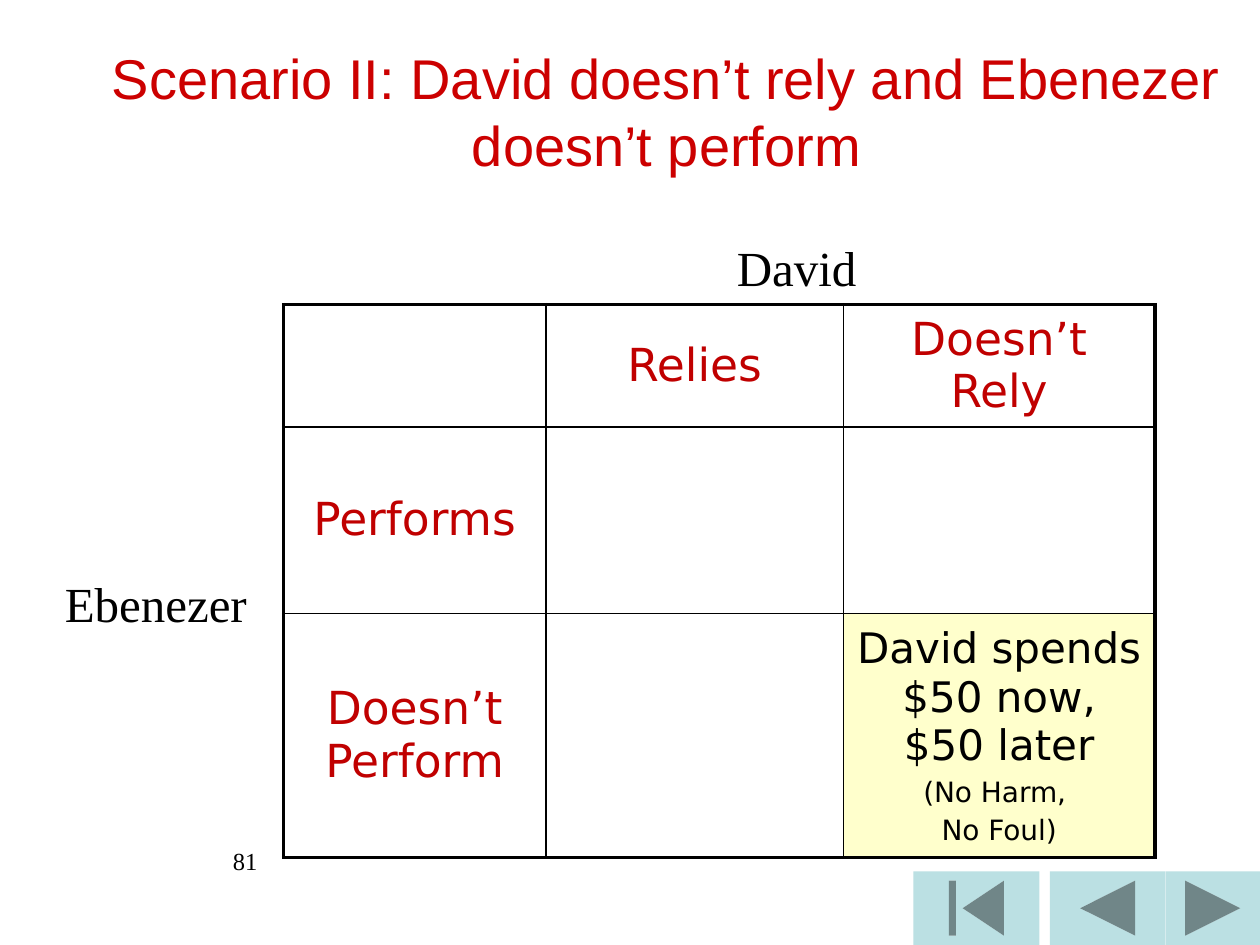
from lxml import etree
from pptx import Presentation
from pptx.dml.color import RGBColor
from pptx.enum.shapes import MSO_SHAPE
from pptx.enum.text import MSO_ANCHOR, MSO_AUTO_SIZE, PP_ALIGN
from pptx.oxml.ns import qn
from pptx.util import Pt

CENTER = PP_ALIGN.CENTER
MIDDLE = MSO_ANCHOR.MIDDLE
NO_AUTO_SIZE = MSO_AUTO_SIZE.NONE
BEGINNING = MSO_SHAPE.ACTION_BUTTON_BEGINNING
PREVIOUS = MSO_SHAPE.ACTION_BUTTON_BACK_OR_PREVIOUS
NEXT = MSO_SHAPE.ACTION_BUTTON_FORWARD_OR_NEXT

BLACK = RGBColor(0x00, 0x00, 0x00)
TITLE_RED = RGBColor(0xCC, 0x00, 0x00)
HEADING_RED = RGBColor(0xC0, 0x00, 0x00)
OUTCOME_YELLOW = RGBColor(0xFF, 0xFF, 0xCC)
BUTTON_BLUE = RGBColor(0xBB, 0xE0, 0xE3)

TITLE_FONT = "Arial"
TABLE_FONT = "DejaVu Sans"
LABEL_FONT = "Times New Roman"

COLUMN_WIDTHS = (150, 170, 178)
ROW_HEIGHTS = (70, 106.5, 139.5)
HEADINGS = {
    (0, 1): "Relies",
    (0, 2): "Doesn’t Rely",
    (1, 0): "Performs",
    (2, 0): "Doesn’t Perform",
}
OUTCOME = (("David spends $50 now, $50 later", 24), ("(No Harm, ", 16), ("No Foul)", 16))
THICK, THIN = 2.25, 1


def add_run(paragraph, text, font_name, size, color):
    run = paragraph.add_run()
    run.text = text
    run.font.name = font_name
    run.font.size = Pt(size)
    run.font.color.rgb = color


def place(shape, left, top, width, height):
    shape.left, shape.top = Pt(left), Pt(top)
    shape.width, shape.height = Pt(width), Pt(height)


def add_title(slide, left, top, width, height):
    title = slide.shapes.title
    place(title, left, top, width, height)
    frame = title.text_frame
    frame.auto_size = NO_AUTO_SIZE
    frame.word_wrap = True
    frame.vertical_anchor = MIDDLE
    paragraph = frame.paragraphs[0]
    paragraph.alignment = CENTER
    add_run(paragraph, "Scenario II: David doesn’t rely and Ebenezer doesn’t perform",
            TITLE_FONT, 32, TITLE_RED)


def add_label(slide, text, size, left, top, width, height):
    box = slide.shapes.add_textbox(Pt(left), Pt(top), Pt(width), Pt(height))
    box.text_frame.word_wrap = True
    add_run(box.text_frame.paragraphs[0], text, LABEL_FONT, size, BLACK)


def set_borders(cell, widths):
    properties = cell._tc.get_or_add_tcPr()
    for side, width in widths.items():
        line = etree.SubElement(properties, qn(f"a:ln{side}"), w=str(Pt(width)))
        fill = etree.SubElement(line, qn("a:solidFill"))
        etree.SubElement(fill, qn("a:srgbClr"), val=str(BLACK))


def fill_cell(cell, lines, color):
    cell.vertical_anchor = MIDDLE
    frame = cell.text_frame
    for index, (text, size) in enumerate(lines):
        paragraph = frame.add_paragraph() if index else frame.paragraphs[0]
        paragraph.alignment = CENTER
        if index:
            paragraph.space_before = Pt(size * 0.2)
        add_run(paragraph, text, TABLE_FONT, size, color)


def add_payoff_table(slide, left, top):
    last_row, last_column = len(ROW_HEIGHTS) - 1, len(COLUMN_WIDTHS) - 1
    table = slide.shapes.add_table(
        len(ROW_HEIGHTS), len(COLUMN_WIDTHS), Pt(left), Pt(top),
        Pt(sum(COLUMN_WIDTHS)), Pt(sum(ROW_HEIGHTS))).table
    table.first_row = False
    table.horz_banding = False
    for column, width in zip(table.columns, COLUMN_WIDTHS):
        column.width = Pt(width)
    for row_index, height in enumerate(ROW_HEIGHTS):
        table.rows[row_index].height = Pt(height)
        for column_index in range(len(COLUMN_WIDTHS)):
            cell = table.cell(row_index, column_index)
            set_borders(cell, {
                "L": THICK if column_index == 0 else THIN,
                "R": THICK if column_index == last_column else THIN,
                "T": THICK if row_index == 0 else THIN,
                "B": THICK if row_index == last_row else THIN,
            })
            cell.fill.background()
            heading = HEADINGS.get((row_index, column_index))
            if heading:
                fill_cell(cell, [(heading, 26)], HEADING_RED)
    outcome = table.cell(last_row, last_column)
    outcome.fill.solid()
    outcome.fill.fore_color.rgb = OUTCOME_YELLOW
    fill_cell(outcome, OUTCOME, BLACK)


def add_navigation(slide, top, height):
    for kind, left, width in ((PREVIOUS, 600, 66), (BEGINNING, 522, 72), (NEXT, 666, 54)):
        button = slide.shapes.add_shape(kind, Pt(left), Pt(top), Pt(width), Pt(height))
        button.shadow.inherit = False
        button.fill.solid()
        button.fill.fore_color.rgb = BUTTON_BLUE
        button.line.fill.background()


def main():
    presentation = Presentation()
    presentation.slide_width, presentation.slide_height = Pt(720), Pt(540)
    slide = presentation.slides.add_slide(presentation.slide_layouts[5])
    add_navigation(slide, 498, 42)
    add_label(slide, "81", 14, 126, 480, 438, 37.5)
    add_title(slide, 42, 18, 678, 90)
    add_payoff_table(slide, 162, 174)
    add_label(slide, "David", 28, 414, 132, 124, 41)
    add_label(slide, "Ebenezer", 28, 30, 324, 132, 41)
    presentation.save("out.pptx")


if __name__ == "__main__":
    main()
